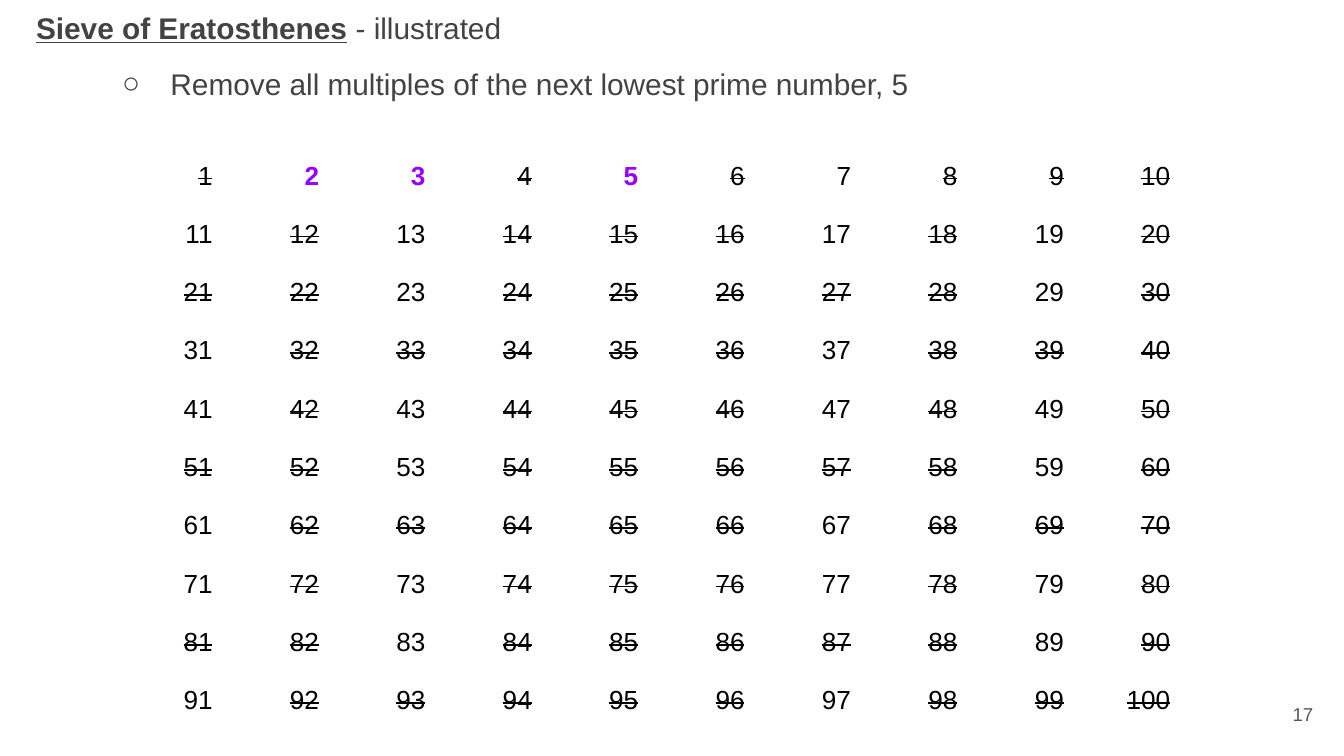
from typing import NamedTuple

from lxml.etree import SubElement
from pptx import Presentation
from pptx.dml.color import RGBColor
from pptx.enum.text import MSO_ANCHOR, PP_ALIGN
from pptx.oxml.ns import qn
from pptx.util import Inches, Pt

PRIMES = (2, 3, 5)
SIDE = 10
GREY = "434343"
PLAIN = "{2D5ABB26-0587-4C30-8999-92F81FD0307C}"


class Style(NamedTuple):
    size: float
    color: str
    bold: bool = False
    line: bool = False
    strike: bool = False


class Box(NamedTuple):
    left: float
    top: float
    width: float
    height: float


def paint(font, color: str) -> None:
    font.color.rgb = RGBColor.from_string(color)


def format_run(run, style: Style) -> None:
    font = run.font
    font.name = "Arial"
    font.size = Pt(style.size)
    font.bold = style.bold
    font.underline = style.line
    paint(font, style.color)
    if style.strike:
        run._r.get_or_add_rPr().set("strike", "sngStrike")


def set_insets(item) -> None:
    for side in ("left", "right", "top", "bottom"):
        setattr(item, f"margin_{side}", Inches(0.1))


def add_text(slide, box: Box, text: str):
    frame = slide.shapes.add_textbox(*map(Inches, box)).text_frame
    frame.word_wrap = True
    set_insets(frame)
    frame.text = text
    return frame


def add_bullet(para, mark: str) -> None:
    props = para._p.get_or_add_pPr()
    props.set("marL", str(Inches(1)))
    props.set("indent", str(Inches(-0.36)))
    props.set("lvl", "1")
    color = SubElement(props, qn("a:buClr"))
    SubElement(color, qn("a:srgbClr"), val=GREY)
    SubElement(props, qn("a:buFont"), typeface="Arial")
    SubElement(props, qn("a:buChar"), char=mark)


def add_heading(slide) -> None:
    frame = add_text(slide, Box(0.17, -0.07, 9.69, 0.88), "Sieve of Eratosthenes")
    title = frame.paragraphs[0]
    title.add_run().text = " - illustrated"
    step = frame.add_paragraph()
    step.text = "Remove all multiples of the next lowest prime number, 5"
    for para in (title, step):
        para.line_spacing = 1.15
        para.space_before = Pt(8)
        for run in para.runs:
            format_run(run, Style(16, GREY))
    format_run(title.runs[0], Style(16, GREY, bold=True, line=True))
    step.space_after = Pt(8)
    add_bullet(step, "○")


def pick_style(number: int) -> Style:
    if number in PRIMES:
        return Style(14, "9900FF", bold=True)
    out = number == 1 or any(number % prime == 0 for prime in PRIMES)
    return Style(14, "000000", strike=out)


def fill_cell(cell, number: int) -> None:
    cell.fill.background()
    set_insets(cell)
    para = cell.text_frame.paragraphs[0]
    para.text = str(number)
    para.alignment = PP_ALIGN.RIGHT
    format_run(para.runs[0], pick_style(number))


def add_sieve(slide, box: Box) -> None:
    table = slide.shapes.add_table(SIDE, SIDE, *map(Inches, box)).table
    table.first_row = False
    table.horz_banding = False
    table._tbl.tblPr.find(qn("a:tableStyleId")).text = PLAIN
    for number, cell in enumerate(table.iter_cells(), 1):
        fill_cell(cell, number)


def add_page(slide) -> None:
    frame = add_text(slide, Box(9.27, 5.1, 0.6, 0.43), "17")
    frame.vertical_anchor = MSO_ANCHOR.MIDDLE
    para = frame.paragraphs[0]
    para.alignment = PP_ALIGN.RIGHT
    format_run(para.runs[0], Style(10, "595959"))


def main() -> None:
    deck = Presentation()
    deck.slide_width = Inches(10)
    deck.slide_height = deck.slide_width * 9 // 16
    slide = deck.slides.add_slide(deck.slide_layouts[6])
    add_page(slide)
    add_heading(slide)
    add_sieve(slide, Box(0.89, 1.1, 7.92, 4.18))
    deck.save("out.pptx")


if __name__ == "__main__":
    main()
